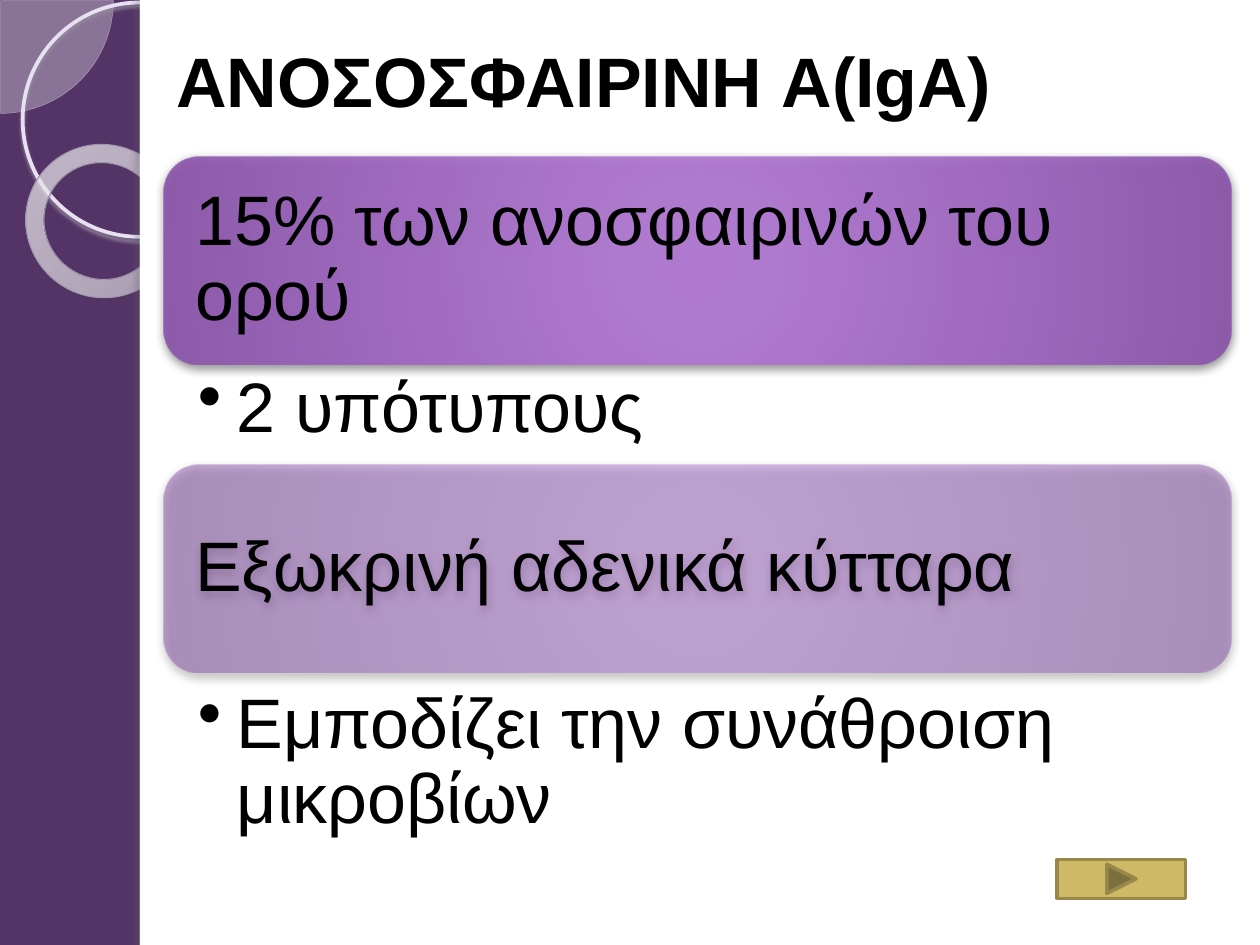
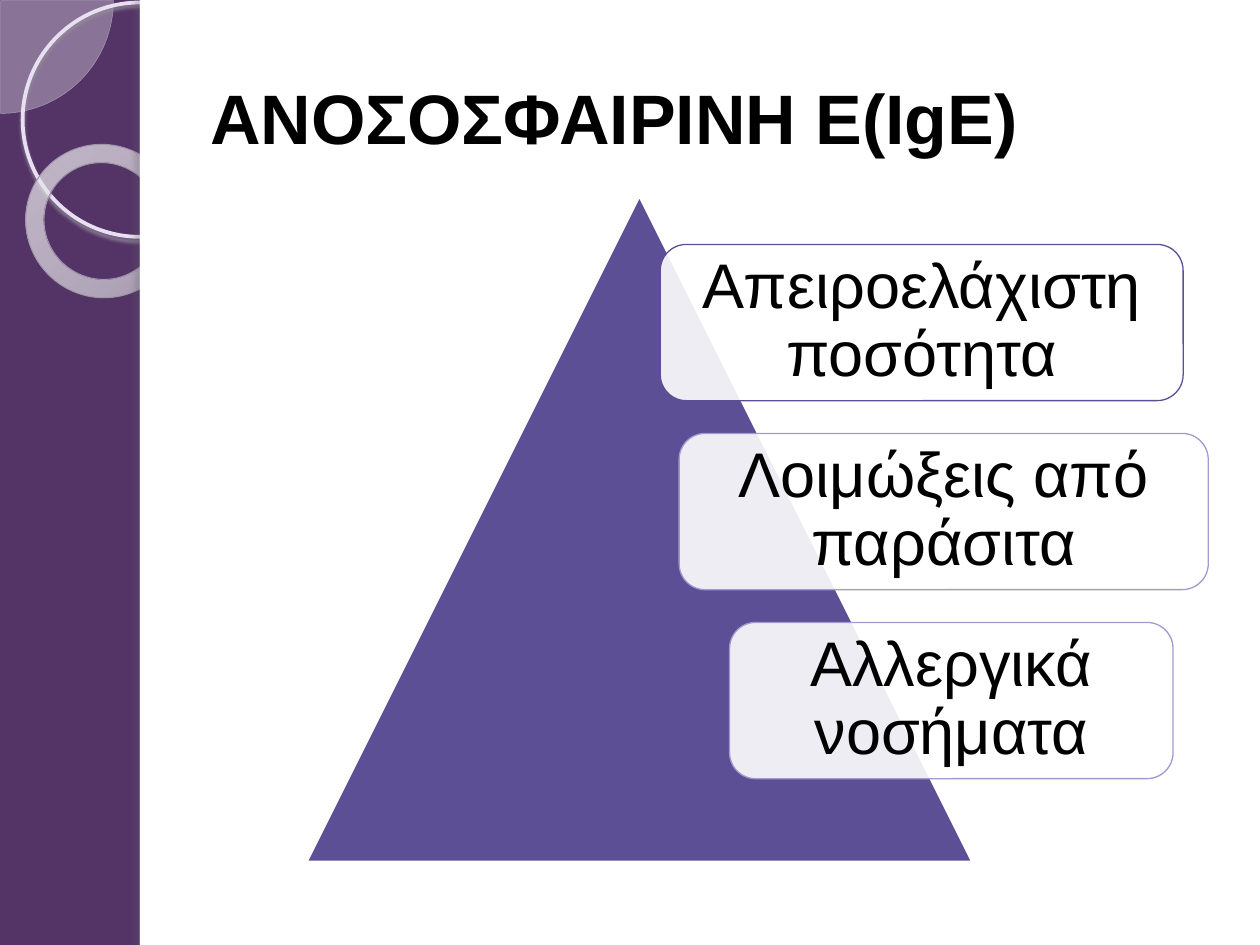
from dataclasses import dataclass
from typing import NamedTuple, Optional

from lxml import etree
from pptx import Presentation
from pptx.dml.color import RGBColor
from pptx.enum.shapes import MSO_SHAPE
from pptx.enum.text import MSO_ANCHOR, PP_ALIGN
from pptx.oxml import parse_xml
from pptx.oxml.ns import nsdecls, qn
from pptx.util import Inches, Pt

ROUNDED, RECTANGLE = MSO_SHAPE.ROUNDED_RECTANGLE, MSO_SHAPE.RECTANGLE
PIE, OVAL, DONUT = MSO_SHAPE.PIE, MSO_SHAPE.OVAL, MSO_SHAPE.DONUT
TRIANGLE = MSO_SHAPE.ISOSCELES_TRIANGLE
NEXT_BUTTON = MSO_SHAPE.ACTION_BUTTON_FORWARD_OR_NEXT
LEFT, CENTER = PP_ALIGN.LEFT, PP_ALIGN.CENTER
TOP, MIDDLE = MSO_ANCHOR.TOP, MSO_ANCHOR.MIDDLE

COLORS = {
    "background": "543466", "panel": "FFFFFF", "text": "000000",
    "pie": "F6F4F9", "pie_line": "ACA0B9",
    "ring_line": "E8E0F2", "ring_shadow": "958D9D",
    "donut_line": "A094AF", "donut_shadow": "4A4550",
    "panel_shadow": "646068", "card_shadow": "000000",
    "button": "CEB966", "button_line": "98894B",
    "pyramid": "5D4F95", "pale_line": "A299CE",
}
CARD_STOPS = ((0, "B277D5"), (15, "B177D4"), (62, "9D63C0"),
              (97, "8C55AC"), (100, "8A50AB"))
FONT_FORMAT = {"name": "Arial", "size": Pt(40), "bold": False}
LINE_SPACING = 0.9


class Box(NamedTuple):
    left: float
    top: float
    width: float
    height: float


class Shadow(NamedTuple):
    color: str
    opacity: int
    blur: float
    distance: float
    angle: int


class Stop(NamedTuple):
    position: int
    color: str
    opacity: int


class Gradient(NamedTuple):
    stops: tuple
    focus: tuple = (50, 50, 50, 50)


class Insets(NamedTuple):
    left: float
    top: float
    right: float
    bottom: float


@dataclass
class Figure:
    kind: int
    box: Box
    fill: Optional[str] = None
    opacity: int = 100
    gradient: Optional[Gradient] = None
    line: Optional[str] = None
    line_width: float = 0.75
    shadow: Optional[Shadow] = None
    adjustments: tuple = ()
    rotation: float = 0


class Topic(NamedTuple):
    heading: str
    top: float
    opacity: int
    detail: str
    detail_top: float
    detail_height: float


class Fact(NamedTuple):
    text: str
    left: float
    width: float
    line: str


FRAME = (
    Figure(PIE, Box(-0.89, -0.89, 1.79, 1.79), "pie", 33,
           line="pie_line", line_width=0.25, adjustments=(0, 54)),
    Figure(OVAL, Box(0.18, 0.02, 1.86, 1.86), line="ring_line", line_width=2.15,
           shadow=Shadow("ring_shadow", 85, 2, 2, 90)),
    Figure(DONUT, Box(0.2, 1.15, 1.23, 1.21), line="donut_line", line_width=0.58,
           gradient=Gradient((Stop(0, "F9F7FB", 70), Stop(70, "FCFBFE", 55),
                              Stop(100, "B099CA", 60)), (-408, -50, 508, 150)),
           shadow=Shadow("donut_shadow", 35, 1, 1.2, 75),
           adjustments=(0.12,), rotation=38.6),
    Figure(RECTANGLE, Box(1.11, 0, 8.89, 7.5), "panel"),
    Figure(RECTANGLE, Box(1.11, 0, 0.08, 7.5), "panel",
           shadow=Shadow("panel_shadow", 25, 3, 3, 180)),
)

TOPIC_LEFT, TOPIC_WIDTH, TOPIC_HEIGHT = 1.3, 8.47, 1.65
TOPICS = (
    Topic("15% των ανοσφαιρινών του ορού", 1.24, 90, "2 υπότυπους", 2.89, 1.01),
    Topic("Εξωκρινή αδενικά κύτταρα", 3.69, 50,
          "Εμποδίζει την συνάθροιση μικροβίων", 5.4, 1.27),
)
FACT_TOP, FACT_HEIGHT, FACT_PITCH = 1.94, 1.24, 1.5
FACTS = (
    Fact("Απειροελάχιστη ποσότητα", 5.24, 4.15, "pyramid"),
    Fact("Λοιμώξεις από παράσιτα", 5.39, 4.2, "pale_line"),
    Fact("Αλλεργικά νοσήματα", 5.79, 3.52, "pale_line"),
)
TITLE_INSETS = Insets(0.1, 0.05, 0.1, 0.05)
DETAIL_INSETS = Insets(0.27, 0.06, 0.31, 0.06)
BULLET_INDENT = 0.31


def rgb(color: str) -> RGBColor:
    return RGBColor.from_string(COLORS[color])


def inches(box: Box) -> list:
    return [Inches(length) for length in box]


def color_xml(value: str, opacity: int) -> str:
    return f'<a:srgbClr val="{value}"><a:alpha val="{opacity * 1000}"/></a:srgbClr>'


def apply_gradient(shape, gradient: Gradient) -> None:
    """Swap the solid fill for a circular gradient."""
    stops = "".join(f'<a:gs pos="{stop.position * 1000}">'
                    f'{color_xml(stop.color, stop.opacity)}</a:gs>'
                    for stop in gradient.stops)
    focus = " ".join(f'{side}="{percent * 1000}"'
                     for side, percent in zip("ltrb", gradient.focus))
    shape.fill.solid()
    properties = shape._element.spPr
    properties.replace(properties.find(qn("a:solidFill")), parse_xml(
        f'<a:gradFill {nsdecls("a")} rotWithShape="1"><a:gsLst>{stops}</a:gsLst>'
        f'<a:path path="circle"><a:fillToRect {focus}/></a:path></a:gradFill>'))


def apply_shadow(shape, shadow: Shadow) -> None:
    effects = shape._element.spPr.find(qn("a:effectLst"))
    effects.append(parse_xml(
        f'<a:outerShdw {nsdecls("a")} blurRad="{Pt(shadow.blur)}" '
        f'dist="{Pt(shadow.distance)}" dir="{shadow.angle * 60000}" '
        f'algn="ctr" rotWithShape="0">'
        f'{color_xml(COLORS[shadow.color], shadow.opacity)}</a:outerShdw>'))


def draw_figure(slide, figure: Figure):
    shape = slide.shapes.add_shape(figure.kind, *inches(figure.box))
    shape.rotation = figure.rotation
    for index, value in enumerate(figure.adjustments):
        shape.adjustments[index] = value
    shape.shadow.inherit = False
    if figure.gradient:
        apply_gradient(shape, figure.gradient)
    elif figure.fill:
        shape.fill.solid()
        shape.fill.fore_color.rgb = rgb(figure.fill)
        if figure.opacity < 100:
            color = shape._element.spPr.find(qn("a:solidFill"))[0]
            etree.SubElement(color, qn("a:alpha"), val=str(figure.opacity * 1000))
    else:
        shape.fill.background()
    if figure.line:
        shape.line.color.rgb = rgb(figure.line)
        shape.line.width = Pt(figure.line_width)
    else:
        shape.line.fill.background()
    if figure.shadow:
        apply_shadow(shape, figure.shadow)
    return shape


def write_text(shape, text: str, insets: Insets, anchor=MIDDLE, align=LEFT,
               spacing: float = LINE_SPACING, **font_changes):
    frame = shape.text_frame
    frame_format = {"word_wrap": True, "vertical_anchor": anchor}
    for side, inset in insets._asdict().items():
        frame_format[f"margin_{side}"] = Inches(inset)
    for name, value in frame_format.items():
        setattr(frame, name, value)
    paragraph = frame.paragraphs[0]
    paragraph.alignment = align
    paragraph.line_spacing = spacing
    run = paragraph.add_run()
    run.text = text
    for name, value in {**FONT_FORMAT, **font_changes}.items():
        setattr(run.font, name, value)
    run.font.color.rgb = rgb("text")
    return paragraph


def add_bullet(paragraph) -> None:
    properties = paragraph._p.get_or_add_pPr()
    properties.set("marL", str(Inches(BULLET_INDENT)))
    properties.set("indent", str(-Inches(BULLET_INDENT)))
    etree.SubElement(properties, qn("a:buChar"), char="•")


def start_slide(prs, title: str, title_box: Box):
    """Add a slide with the side band, its rings and the title."""
    slide = prs.slides.add_slide(prs.slide_layouts[6])
    for figure in FRAME:
        draw_figure(slide, figure)
    heading = slide.shapes.add_textbox(*inches(title_box))
    write_text(heading, title, TITLE_INSETS, spacing=1.0, bold=True)
    return slide


def draw_topic(slide, topic: Topic) -> None:
    stops = tuple(Stop(*stop, topic.opacity) for stop in CARD_STOPS)
    card = draw_figure(slide, Figure(
        ROUNDED, Box(TOPIC_LEFT, topic.top, TOPIC_WIDTH, TOPIC_HEIGHT),
        gradient=Gradient(stops), shadow=Shadow("card_shadow", 43, 5, 2, 90)))
    write_text(card, topic.heading, Insets(*[0.17] * 4))
    detail = slide.shapes.add_textbox(*inches(
        Box(TOPIC_LEFT, topic.detail_top, TOPIC_WIDTH, topic.detail_height)))
    add_bullet(write_text(detail, topic.detail, DETAIL_INSETS, anchor=TOP))


def draw_fact(slide, fact: Fact, top: float) -> None:
    card = draw_figure(slide, Figure(
        ROUNDED, Box(fact.left, top, fact.width, FACT_HEIGHT), "panel", 90,
        line=fact.line))
    write_text(card, fact.text, Insets(*[0.15] * 4), align=CENTER, size=Pt(36))


def build_iga_slide(prs) -> None:
    slide = start_slide(prs, "ΑΝΟΣΟΣΦΑΙΡΙΝΗ A(IgA)", Box(1.3, 0.21, 8.2, 0.85))
    for topic in TOPICS:
        draw_topic(slide, topic)
    draw_figure(slide, Figure(NEXT_BUTTON, Box(8.39, 6.82, 1.02, 0.31), "button",
                              line="button_line", line_width=2))


def build_ige_slide(prs) -> None:
    slide = start_slide(prs, "ΑΝΟΣΟΣΦΑΙΡΙΝΗ E(IgE)", Box(1.57, 0.3, 8.2, 1.25))
    draw_figure(slide, Figure(TRIANGLE, Box(2.45, 1.58, 5.25, 5.25), "pyramid"))
    for index, fact in enumerate(FACTS):
        draw_fact(slide, fact, FACT_TOP + index * FACT_PITCH)


def main() -> None:
    prs = Presentation()
    prs.slide_width, prs.slide_height = Inches(10), Inches(7.5)
    backdrop = prs.slide_master.background.fill
    backdrop.solid()
    backdrop.fore_color.rgb = rgb("background")
    build_iga_slide(prs)
    build_ige_slide(prs)
    prs.save("out.pptx")


if __name__ == "__main__":
    main()
